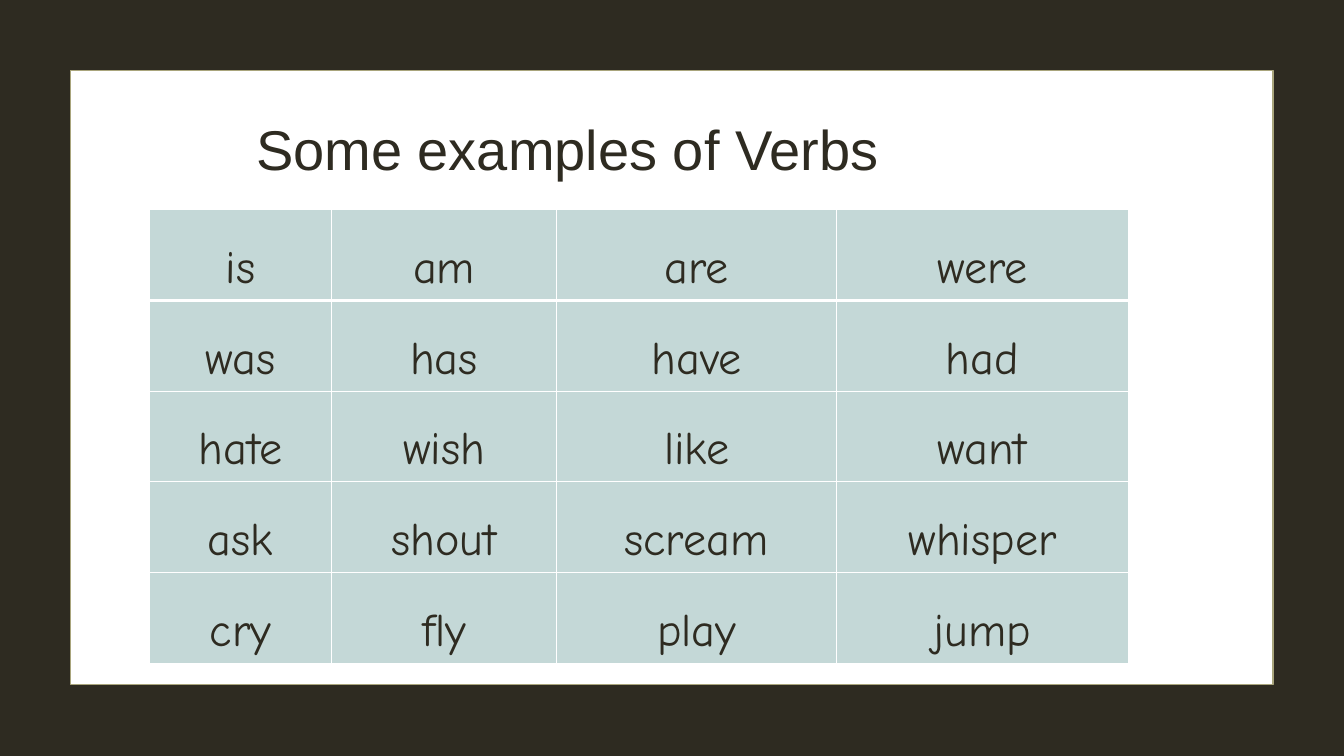
from dataclasses import dataclass
from typing import Optional

from lxml import etree
from pptx import Presentation
from pptx import util as u
from pptx.dml.color import RGBColor
from pptx.enum import shapes, text
from pptx.oxml import ns

DARK, WHITE, OLIVE, TEAL = "2E2B21", "FFFFFF", "A9A57C", "C4D8D7"
VERBS = [
    ["is", "am", "are", "were"],
    ["was", "has", "have", "had"],
    ["hate", "wish", "like", "want"],
    ["ask", "shout", "scream", "whisper"],
    ["cry", "fly", "play", "jump"],
]
COLUMN_WIDTHS = [1.81, 2.23, 2.78, 2.89]
ROW_HEIGHT = 0.9


@dataclass
class Panel:
    left: float
    top: float
    width: float
    height: float
    line: str
    fill: Optional[str] = None


PANELS = [
    Panel(0.52, 0.53, 12.29, 6.45, DARK),
    Panel(0.7, 0.7, 11.93, 6.09, OLIVE, WHITE),
]


def color(value: str) -> RGBColor:
    return RGBColor.from_string(value)


def add_run(paragraph, words: str, font: str, size: float) -> None:
    run = paragraph.add_run()
    run.text = words
    run.font.name = font
    run.font.size = u.Pt(size)
    run.font.color.rgb = color(DARK)


def add_panel(slide, panel: Panel) -> None:
    shape = slide.shapes.add_shape(
        shapes.MSO_SHAPE.RECTANGLE, u.Inches(panel.left), u.Inches(panel.top),
        u.Inches(panel.width), u.Inches(panel.height))
    shape.shadow.inherit = False
    if panel.fill:
        shape.fill.solid()
        shape.fill.fore_color.rgb = color(panel.fill)
    else:
        shape.fill.background()
    shape.line.color.rgb = color(panel.line)
    shape.line.width = u.Pt(1.25)


def set_border(cell, side: str, points: float) -> None:
    properties = cell._tc.get_or_add_tcPr()
    line = etree.SubElement(properties, ns.qn(f"a:ln{side}"), w=str(u.Pt(points)))
    fill = etree.SubElement(line, ns.qn("a:solidFill"))
    etree.SubElement(fill, ns.qn("a:srgbClr"), val=WHITE)


def format_cell(cell, verb: str, top: float, bottom: float) -> None:
    for side, points in {"L": 1, "R": 1, "T": top, "B": bottom}.items():
        set_border(cell, side, points)
    cell.fill.solid()
    cell.fill.fore_color.rgb = color(TEAL)
    cell.vertical_anchor = text.MSO_ANCHOR.MIDDLE
    cell.margin_left = cell.margin_right = u.Inches(0.1)
    cell.margin_top = cell.margin_bottom = 0
    paragraph = cell.text_frame.paragraphs[0]
    paragraph.alignment = text.PP_ALIGN.CENTER
    paragraph.line_spacing = 1.5
    add_run(paragraph, verb, "Comic Neue", 33)


def add_verb_table(slide) -> None:
    table = slide.shapes.add_table(
        len(VERBS), len(COLUMN_WIDTHS), u.Inches(1.48), u.Inches(2.08),
        u.Inches(sum(COLUMN_WIDTHS)), u.Inches(ROW_HEIGHT * len(VERBS))).table
    for column, width in zip(table.columns, COLUMN_WIDTHS):
        column.width = u.Inches(width)
    for i, verbs in enumerate(VERBS):
        table.rows[i].height = u.Inches(ROW_HEIGHT)
        # A thicker rule separates the first row from the second
        top, bottom = 3 if i == 1 else 1, 3 if i == 0 else 1
        for j, verb in enumerate(verbs):
            format_cell(table.cell(i, j), verb, top, bottom)


def format_title(slide) -> None:
    title = slide.shapes.title
    title.left, title.top = u.Inches(2.44), u.Inches(1.09)
    title.width, title.height = u.Inches(8.63), u.Inches(0.77)
    frame = title.text_frame
    frame.word_wrap = True
    frame.auto_size = text.MSO_AUTO_SIZE.SHAPE_TO_FIT_TEXT
    frame.vertical_anchor = text.MSO_ANCHOR.TOP
    paragraph = frame.paragraphs[0]
    paragraph.alignment = text.PP_ALIGN.LEFT
    add_run(paragraph, "Some examples of Verbs", "Arial", 40)
    # Bring the title in front of the panels
    title.element.getparent().append(title.element)


def main() -> None:
    presentation = Presentation()
    presentation.slide_width = u.Inches(13.33)
    presentation.slide_height = u.Inches(7.5)
    slide = presentation.slides.add_slide(presentation.slide_layouts[5])

    # Background and framed panel
    slide.background.fill.solid()
    slide.background.fill.fore_color.rgb = color(DARK)
    for panel in PANELS:
        add_panel(slide, panel)

    # Content
    add_verb_table(slide)
    format_title(slide)
    presentation.save("out.pptx")


if __name__ == "__main__":
    main()
